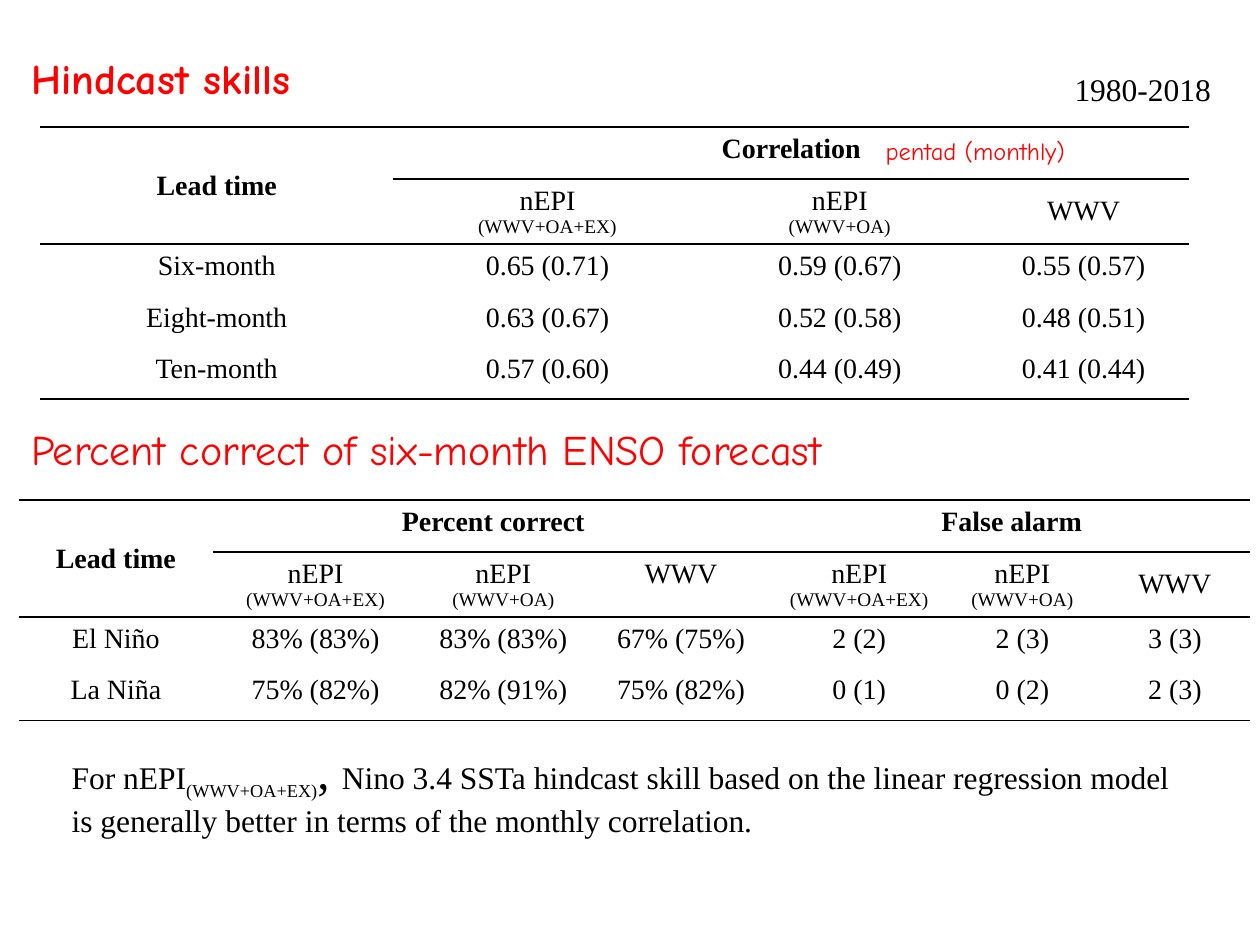
from lxml import etree
from pptx import Presentation
from pptx.dml.color import RGBColor
from pptx.enum import text
from pptx.oxml import ns
from pptx.util import Inches, Pt

RED = RGBColor(0xFF, 0, 0)
BLACK = RGBColor(0, 0, 0)
SERIF = "Times New Roman"
COMIC = "Comic Neue"
NO_STYLE = "{2D5ABB26-0587-4C30-8999-92F81FD0307C}"
ROW_HEIGHT = 0.41

FULL = "nEPI\n(WWV+OA+EX)"
PARTIAL = "nEPI\n(WWV+OA)"
MODELS = [FULL, PARTIAL, "WWV"]

TABLES = [
    dict(at=(0.32, 1.01), widths=[2.8, 2.45, 2.19, 1.68],
         groups=["Correlation"],
         body=[["Six-month", "0.65 (0.71)", "0.59 (0.67)", "0.55 (0.57)"],
               ["Eight-month", "0.63 (0.67)", "0.52 (0.58)", "0.48 (0.51)"],
               ["Ten-month", "0.57 (0.60)", "0.44 (0.49)", "0.41 (0.44)"]]),
    dict(at=(0.15, 3.97), widths=[1.54, 1.63, 1.35, 1.47, 1.36, 1.23, 1.19],
         groups=["Percent correct", "False alarm"],
         body=[["El Niño", "83% (83%)", "83% (83%)", "67% (75%)", "2 (2)", "2 (3)", "3 (3)"],
               ["La Niña", "75% (82%)", "82% (91%)", "75% (82%)", "0 (1)", "0 (2)", "2 (3)"]]),
]

# position, wraps, font, colour, bold, runs of (text, size, baseline percent)
TEXTS = [
    ((0.15, 0.37, 2.69, 0.5), False, COMIC, RED, True, [("Hindcast skills", 24, 0)]),
    ((0.15, 3.31, 7.36, 0.5), False, COMIC, RED, False,
     [("Percent correct of six-month ENSO forecast", 24, 0)]),
    ((6.93, 1.03, 1.85, 0.34), True, COMIC, RED, False, [("pentad (monthly)", 14, 0)]),
    ((8.43, 0.51, 1.3, 0.4), False, SERIF, BLACK, False, [("1980-2018", 18, 0)]),
    ((0.47, 5.83, 9.13, 0.88), True, SERIF, BLACK, False,
     [("For nEPI", 18, 0), ("(WWV+OA+EX)", 18, -25), (", ", 28, 0),
      ("Nino 3.4 SSTa hindcast skill based on the linear regression model "
       "is generally better in terms of the monthly correlation.", 18, 0)]),
]


def set_font(font, name, color, bold):
    font.name, font.bold = name, bold
    font.color.rgb = color


def add_text(slide, at, wraps, name, color, bold, runs):
    tf = slide.shapes.add_textbox(*map(Inches, at)).text_frame
    tf.word_wrap = wraps
    tf.auto_size = text.MSO_AUTO_SIZE.SHAPE_TO_FIT_TEXT
    p = tf.paragraphs[0]
    for content, size, baseline in runs:
        r = p.add_run()
        r.text = content
        set_font(r.font, name, color, bold)
        r.font.size = Pt(size)
        if baseline:
            r.font._element.set("baseline", str(baseline * 1000))


def add_borders(cell, ruled):
    """Rule the sides in ruled and clear the others."""
    for side in "LRTB":
        ln = etree.SubElement(cell._tc.get_or_add_tcPr(), ns.qn(f"a:ln{side}"))
        if side in ruled:
            ln.set("w", str(Pt(1)))
            fill = etree.SubElement(ln, ns.qn("a:solidFill"))
            etree.SubElement(fill, ns.qn("a:srgbClr"), val=str(BLACK))
        else:
            etree.SubElement(ln, ns.qn("a:noFill"))


def fill_cell(cell, content, bold):
    cell.text = content
    for i, p in enumerate(cell.text_frame.paragraphs):
        p.alignment = text.PP_ALIGN.CENTER
        set_font(p.font, SERIF, BLACK, bold)
        p.font.size = Pt(11 if i else 16)


def add_skill_table(slide, at, widths, groups, body):
    heads = ["Lead time"]
    for group in groups:
        heads += [group, "", ""]
    rows = [heads, [""] + MODELS * len(groups)] + body
    n_rows, n_cols = len(rows), len(widths)
    table = slide.shapes.add_table(
        n_rows, n_cols, *map(Inches, (*at, sum(widths), ROW_HEIGHT * n_rows))).table
    table._tbl.tblPr.find(ns.qn("a:tableStyleId")).text = NO_STYLE
    table.first_row = table.horz_banding = False
    for column, width in zip(table.columns, widths):
        column.width = Inches(width)

    def has_rule(edge, c):
        return edge in (0, 2, n_rows) or (edge == 1 and c > 0)

    for r, row in enumerate(rows):
        table.rows[r].height = Inches(ROW_HEIGHT)
        for c, content in enumerate(row):
            cell = table.cell(r, c)
            fill_cell(cell, content, bold=r == 0)
            add_borders(cell, "T" * has_rule(r, c) + "B" * has_rule(r + 1, c))
            cell.fill.background()

    table.cell(0, 0).merge(table.cell(1, 0))
    for c in range(1, n_cols, len(MODELS)):
        table.cell(0, c).merge(table.cell(0, c + len(MODELS) - 1))
    for cell in (table.cell(0, 0), table.cell(1, n_cols - 1)):
        cell.vertical_anchor = text.MSO_ANCHOR.MIDDLE


def main():
    prs = Presentation()
    prs.slide_width, prs.slide_height = Inches(10), Inches(7.5)
    slide = prs.slides.add_slide(prs.slide_layouts[6])
    for table in TABLES:
        add_skill_table(slide, **table)
    for item in TEXTS:
        add_text(slide, *item)
    prs.save("out.pptx")


if __name__ == "__main__":
    main()
